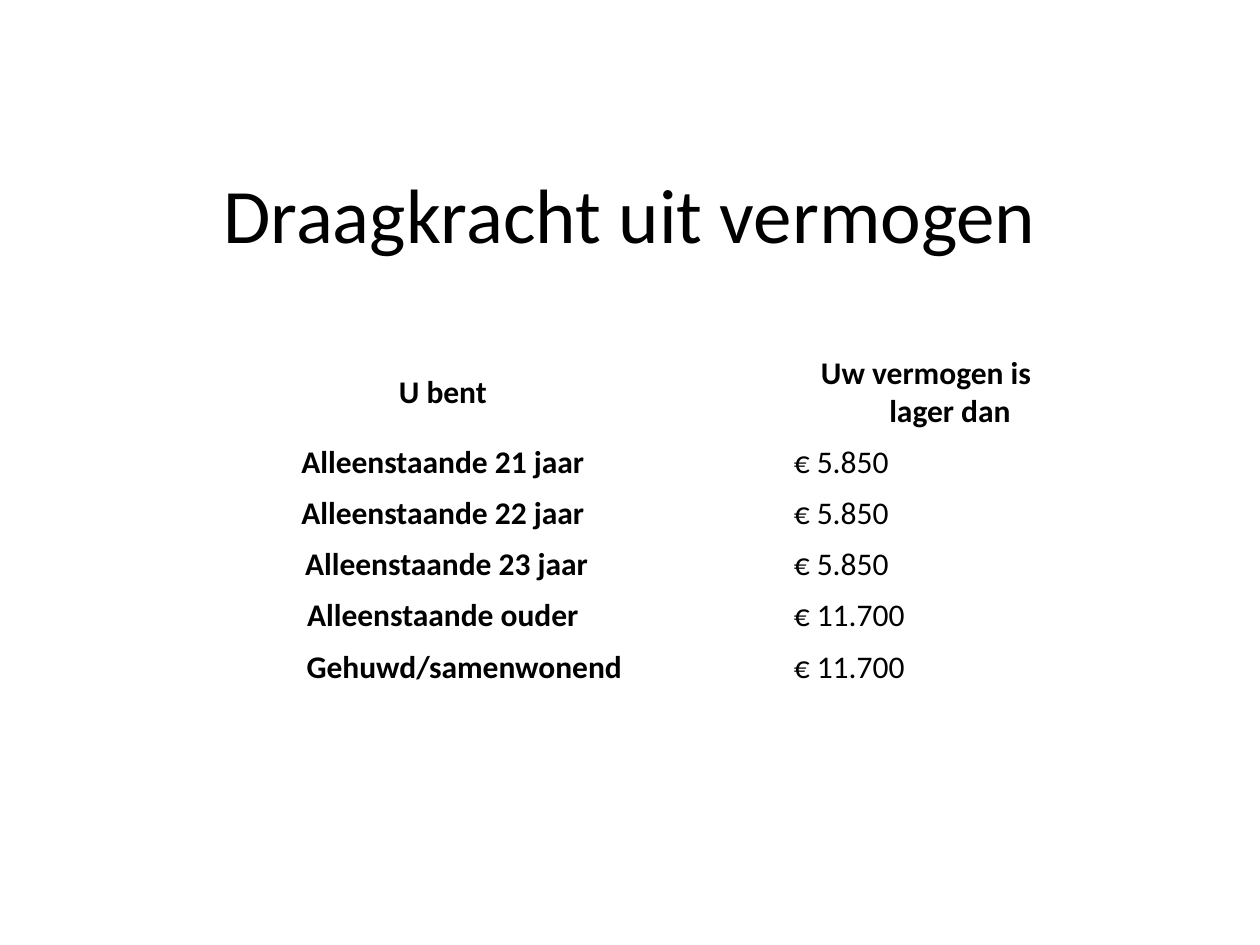
from pptx import Presentation
from pptx.dml.color import RGBColor
from pptx.enum.text import MSO_ANCHOR, PP_ALIGN
from pptx.util import Inches, Pt

BLACK = RGBColor(0, 0, 0)
FONT = "Calibri"
HANGING = 0.38

TITLE = "Draagkracht uit vermogen"
HEADER = ("U bent", "Uw vermogen is lager dan")
# Label, limit, extra indent of the label in inches
ROWS = [
    ("Alleenstaande 21 jaar", "€ 5.850", 0),
    ("Alleenstaande 22 jaar", "€ 5.850", 0),
    ("Alleenstaande 23 jaar", "€ 5.850", 0.06),
    ("Alleenstaande ouder", "€ 11.700", 0),
    ("Gehuwd/samenwonend", "€ 11.700", 0.34),
]
COL_WIDTHS = (4.03, 0.67, 2.3)
HEADER_HEIGHT, ROW_HEIGHT = 0.7, 0.4
LABEL_COL, LIMIT_COL = 0, 2


def write(tf, text, size, bold=False, centered=True):
    tf.text = text
    p = tf.paragraphs[0]
    p.alignment = PP_ALIGN.CENTER if centered else PP_ALIGN.LEFT
    font = p.runs[0].font
    font.name, font.size, font.bold = FONT, Pt(size), bold
    font.color.rgb = BLACK
    return p


def write_cell(cell, text, bold=True, centered=True, extra=0):
    p = write(cell.text_frame, text, 18, bold, centered)
    pPr = p._p.get_or_add_pPr()
    pPr.set("marL", str(Inches(HANGING + extra)))
    pPr.set("indent", str(-Inches(HANGING)))


prs = Presentation()
prs.slide_width, prs.slide_height = Inches(10), Inches(7.5)
s = prs.slides.add_slide(prs.slide_layouts[6])

table = s.shapes.add_table(
    len(ROWS) + 1, len(COL_WIDTHS), Inches(1.5), Inches(2.76),
    Inches(sum(COL_WIDTHS)), Inches(HEADER_HEIGHT + ROW_HEIGHT * len(ROWS)),
).table
table.first_row = table.horz_banding = False
for col, width in zip(table.columns, COL_WIDTHS):
    col.width = Inches(width)
for i, row in enumerate(table.rows):
    row.height = Inches(ROW_HEIGHT if i else HEADER_HEIGHT)
for cell in table.iter_cells():
    cell.fill.background()
    cell.vertical_anchor = MSO_ANCHOR.MIDDLE

for col, text in zip((LABEL_COL, LIMIT_COL), HEADER):
    write_cell(table.cell(0, col), text)
for i, (label, limit, extra) in enumerate(ROWS, start=1):
    write_cell(table.cell(i, LABEL_COL), label, extra=extra)
    write_cell(table.cell(i, LIMIT_COL), limit, bold=False, centered=False)

title = s.shapes.add_textbox(Inches(0.5), Inches(1.24), Inches(9), Inches(0.89))
title.text_frame.word_wrap = True
title.text_frame.vertical_anchor = MSO_ANCHOR.MIDDLE
write(title.text_frame, TITLE, 44)

prs.save("out.pptx")
